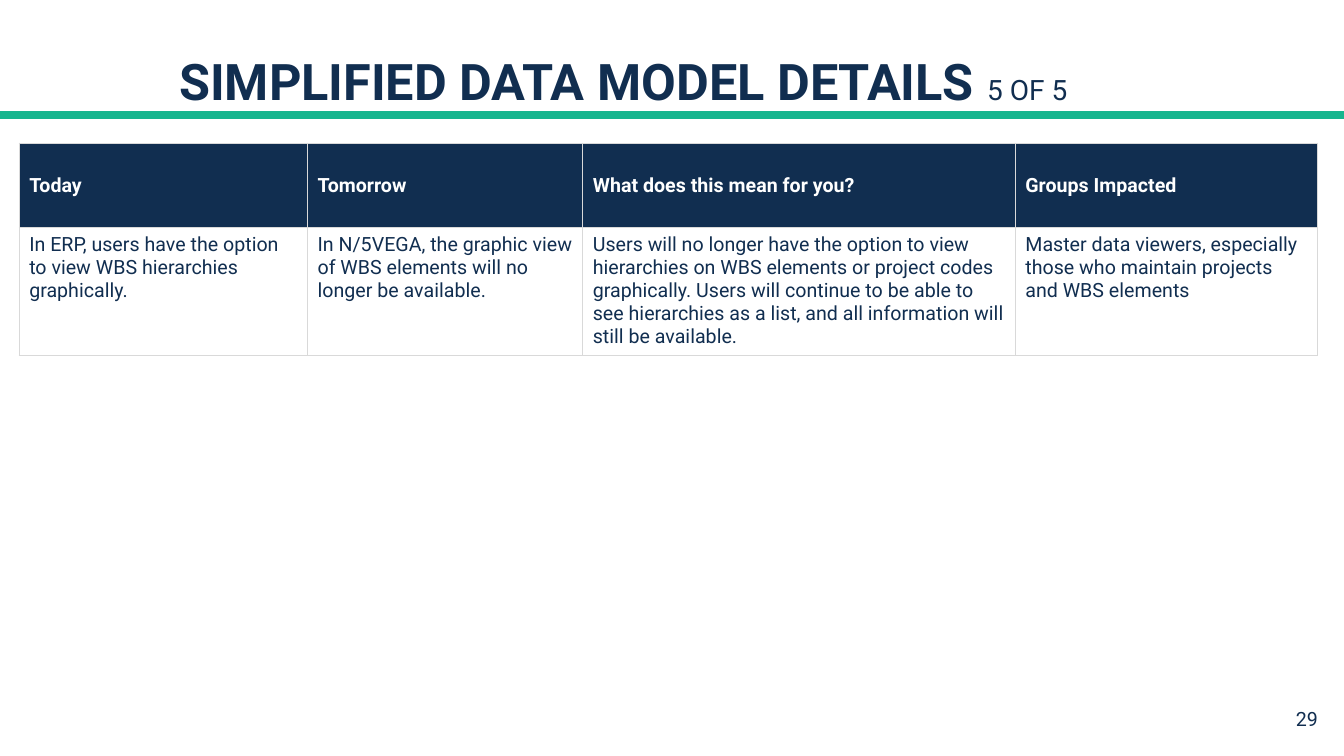
from dataclasses import dataclass

from lxml import etree
from pptx import Presentation
from pptx.dml.color import RGBColor
from pptx.enum.shapes import MSO_CONNECTOR
from pptx.enum.text import MSO_ANCHOR, PP_ALIGN
from pptx.oxml.ns import qn
from pptx.util import Inches, Pt

STRAIGHT = MSO_CONNECTOR.STRAIGHT
TOP, MIDDLE, BOTTOM = MSO_ANCHOR.TOP, MSO_ANCHOR.MIDDLE, MSO_ANCHOR.BOTTOM
RIGHT = PP_ALIGN.RIGHT


@dataclass(frozen=True)
class Theme:
    font: str = "Roboto"
    navy: RGBColor = RGBColor.from_string("112E50")
    green: RGBColor = RGBColor.from_string("16B58E")
    white: RGBColor = RGBColor.from_string("FFFFFF")
    border: str = "D9D9D9"
    title_size: Pt = Pt(36)
    counter_size: Pt = Pt(20)
    body_size: Pt = Pt(14)


THEME = Theme()


def set_font(font, size, color=THEME.navy, bold=False):
    font.name = THEME.font
    font.size = size
    font.bold = bold
    font.color.rgb = color


def add_borders(cell):
    properties = cell._tc.get_or_add_tcPr()
    for side in ("a:lnL", "a:lnR", "a:lnT", "a:lnB"):
        line = etree.SubElement(properties, qn(side), w=str(Pt(1)))
        fill = etree.SubElement(line, qn("a:solidFill"))
        etree.SubElement(fill, qn("a:srgbClr"), val=THEME.border)


deck = Presentation()
deck.slide_width = Inches(13.33)
deck.slide_height = Inches(7.5)
page = deck.slides.add_slide(deck.slide_layouts[6])

# Page number
number_box = page.shapes.add_textbox(Inches(12.53), Inches(6.96), Inches(0.64), Inches(0.39))
number_box.text_frame.word_wrap = True
para = number_box.text_frame.paragraphs[0]
para.text = "29"
para.alignment = RIGHT
set_font(para.font, THEME.body_size)

# Rule under the title
rule = page.shapes.add_connector(STRAIGHT, 0, Inches(1.14), deck.slide_width, Inches(1.14))
rule.line.color.rgb = THEME.green
rule.line.width = Pt(6)
etree.SubElement(rule._element.spPr, qn("a:effectLst"))

# Title
title_box = page.shapes.add_textbox(Inches(1.68), Inches(0.39), Inches(9.95), Inches(0.76))
title_box.text_frame.word_wrap = True
title_box.text_frame.vertical_anchor = BOTTOM
para = title_box.text_frame.paragraphs[0]
para.line_spacing = 0.9
for text, size, bold in (
    ("SIMPLIFIED DATA MODEL DETAILS ", THEME.title_size, True),
    ("5 OF 5", THEME.counter_size, False),
):
    span = para.add_run()
    span.text = text
    set_font(span.font, size, bold=bold)

# Table of changes
COLUMNS = [
    (2.86, "Today",
     "In ERP, users have the option to view WBS hierarchies graphically."),
    (2.73, "Tomorrow",
     "In N/5VEGA, the graphic view of WBS elements will no longer be available."),
    (4.29, "What does this mean for you?",
     "Users will no longer have the option to view hierarchies on WBS elements or "
     "project codes graphically. Users will continue to be able to see hierarchies "
     "as a list, and all information will still be available."),
    (3, "Groups Impacted",
     "Master data viewers, especially those who maintain projects and WBS elements"),
]
table = page.shapes.add_table(
    2, len(COLUMNS), Inches(0.19), Inches(1.42), Inches(12.88), Inches(2.11)
).table
table.horz_banding = False
table.rows[0].height = Inches(0.84)
table.rows[1].height = Inches(1.11)

for column, (width, *texts) in enumerate(COLUMNS):
    table.columns[column].width = Inches(width)
    for row, text in enumerate(texts):
        is_header = row == 0
        cell = table.cell(row, column)
        add_borders(cell)
        if is_header:
            cell.fill.solid()
            cell.fill.fore_color.rgb = THEME.navy
        else:
            cell.fill.background()
        cell.vertical_anchor = MIDDLE if is_header else TOP
        para = cell.text_frame.paragraphs[0]
        para.text = text
        set_font(para.font, THEME.body_size, THEME.white if is_header else THEME.navy, is_header)

deck.save("out.pptx")
